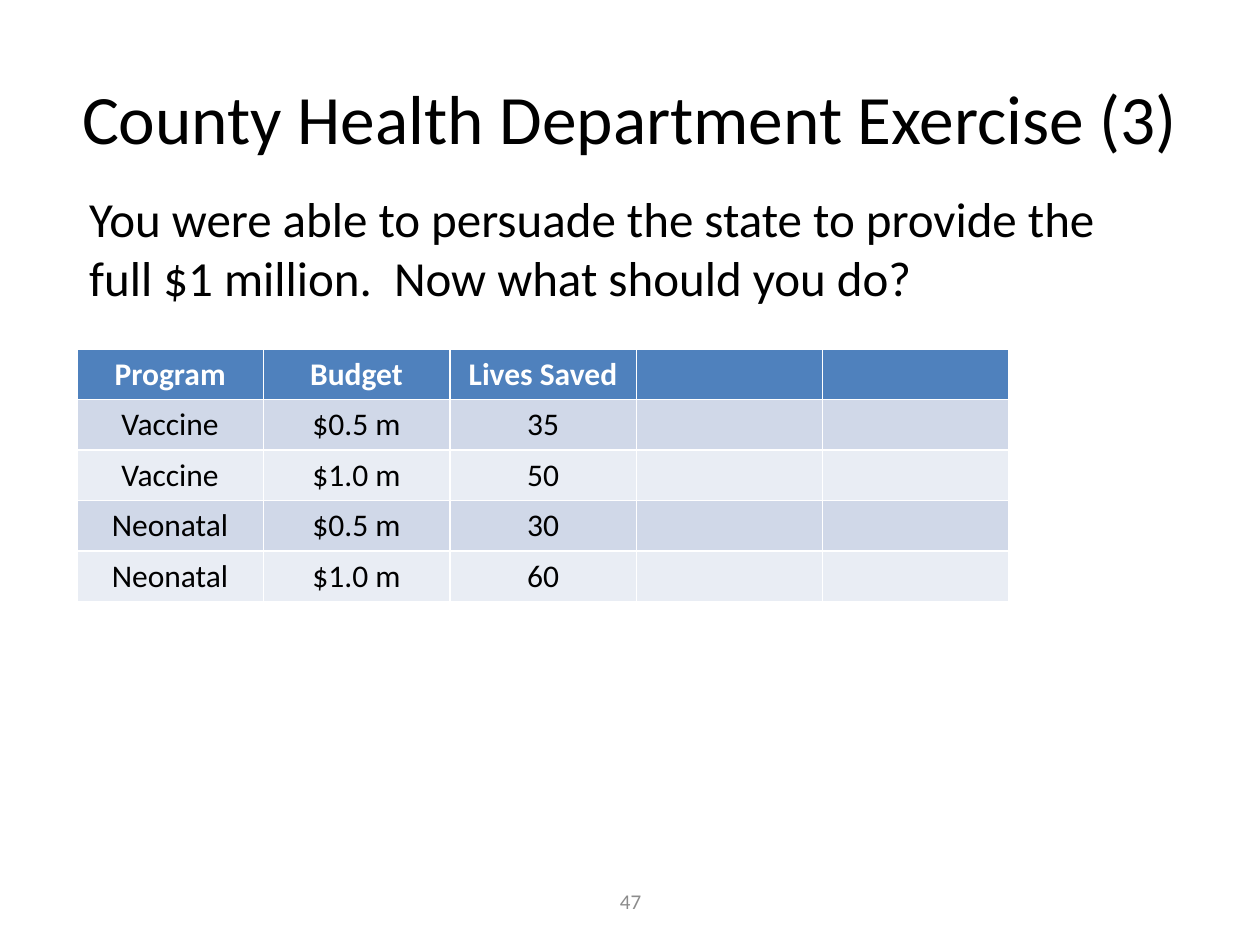
from pptx import Presentation
from pptx.dml.color import RGBColor
from pptx.enum.text import MSO_ANCHOR, PP_ALIGN
from pptx.util import Inches, Pt

BLACK = RGBColor(0x00, 0x00, 0x00)
WHITE = RGBColor(0xFF, 0xFF, 0xFF)
GREY = RGBColor(0x8C, 0x8C, 0x8C)
HEADER_BLUE = RGBColor(0x4F, 0x81, 0xBD)
BANDS = (RGBColor(0xD0, 0xD8, 0xE8), RGBColor(0xE9, 0xED, 0xF4))

SLIDE_WIDTH, SLIDE_HEIGHT = 10, 7.5
LEFT_MARGIN = 0.61
COLUMN_COUNT, COLUMN_WIDTH, ROW_HEIGHT = 5, 1.48, 0.4

PROGRAMS = (
    ("Program", "Budget", "Lives Saved"),
    ("Vaccine", "$0.5 m", "35"),
    ("Vaccine", "$1.0 m", "50"),
    ("Neonatal", "$0.5 m", "30"),
    ("Neonatal", "$1.0 m", "60"),
)


def format_text(paragraph, size, color, bold=False, align=PP_ALIGN.CENTER):
    paragraph.alignment = align
    values = {"name": "Calibri", "size": Pt(size), "bold": bold}
    for attribute, value in values.items():
        setattr(paragraph.font, attribute, value)
    paragraph.font.color.rgb = color


def add_text(slide, text, box, size, color=BLACK, align=PP_ALIGN.CENTER,
             anchor=MSO_ANCHOR.MIDDLE):
    frame = slide.shapes.add_textbox(*map(Inches, box)).text_frame
    frame.word_wrap = True
    frame.vertical_anchor = anchor
    frame.text = text
    format_text(frame.paragraphs[0], size, color, align=align)


def add_program_table(slide, top):
    """Add the programs, leaving the last two columns empty to be filled in."""
    table = slide.shapes.add_table(
        len(PROGRAMS), COLUMN_COUNT, Inches(LEFT_MARGIN), Inches(top),
        Inches(COLUMN_COUNT * COLUMN_WIDTH),
        Inches(len(PROGRAMS) * ROW_HEIGHT)).table
    for row, program in enumerate(PROGRAMS):
        is_header = row == 0
        for column in range(COLUMN_COUNT):
            cell = table.cell(row, column)
            cell.fill.solid()
            cell.fill.fore_color.rgb = (
                HEADER_BLUE if is_header else BANDS[(row - 1) % 2])
            if column < len(program):
                cell.text = program[column]
            format_text(cell.text_frame.paragraphs[0], 18,
                        WHITE if is_header else BLACK, bold=is_header)


def main():
    presentation = Presentation()
    presentation.slide_width = Inches(SLIDE_WIDTH)
    presentation.slide_height = Inches(SLIDE_HEIGHT)
    slide = presentation.slides.add_slide(presentation.slide_layouts[6])

    add_text(slide, "County Health Department Exercise (3)",
             (0.05 * SLIDE_WIDTH, 0.04 * SLIDE_HEIGHT, 0.9 * SLIDE_WIDTH, 1.25),
             39.6)
    add_program_table(slide, 2.77)
    add_text(slide, "47", (3.42, 6.95, 3.17, 0.4), 12, GREY)
    add_text(slide,
             "You were able to persuade the state to provide the "
             "full $1 million.  Now what should you do?",
             (LEFT_MARGIN, 1.45, 8.59, 1.04), 28,
             align=PP_ALIGN.LEFT, anchor=MSO_ANCHOR.TOP)

    presentation.save("out.pptx")


if __name__ == "__main__":
    main()
